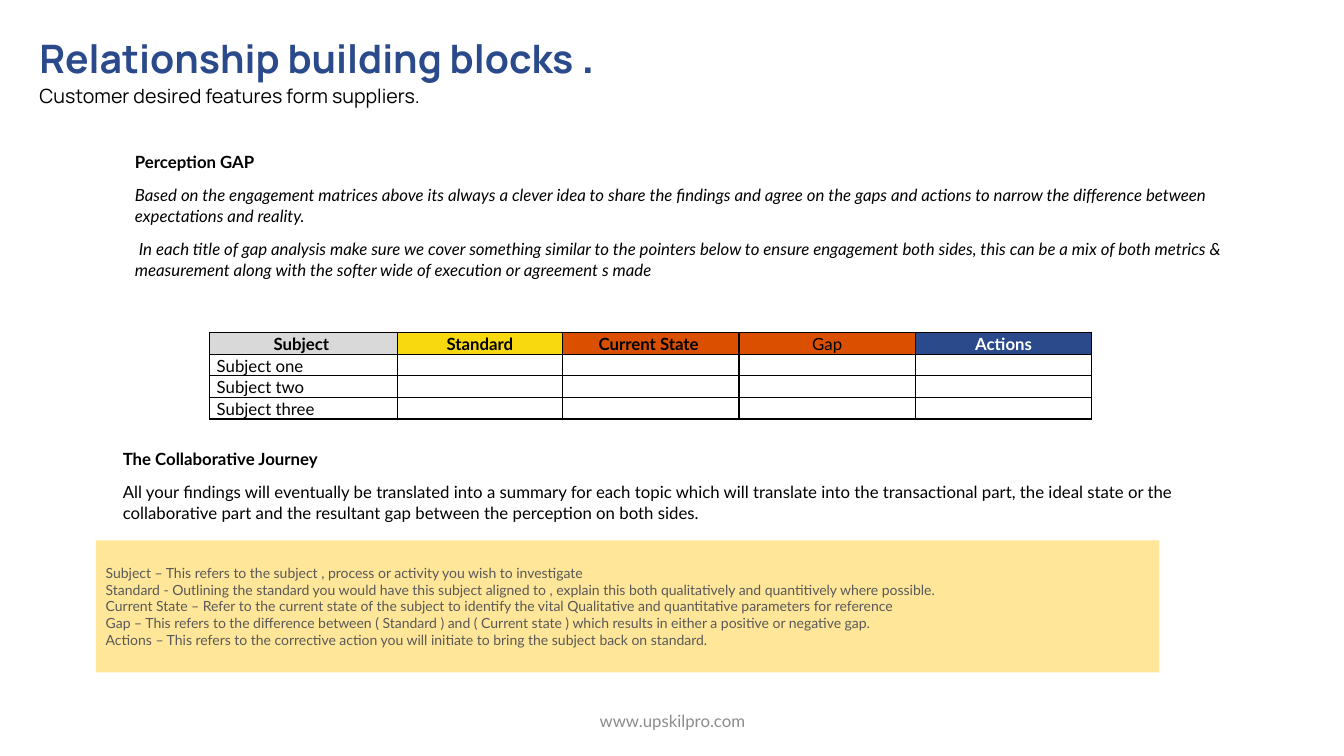
from pptx import Presentation
from pptx import util as u
from pptx.dml.color import RGBColor
from pptx.enum import shapes, text
from pptx.oxml import parse_xml
from pptx.oxml.ns import nsdecls

BLACK = RGBColor(0, 0, 0)
WHITE = RGBColor(255, 255, 255)
NAVY = RGBColor(0x2A, 0x4A, 0x8B)
GREY = RGBColor(0xD9, 0xD9, 0xD9)
YELLOW = RGBColor(0xF8, 0xD9, 0x0F)
ORANGE = RGBColor(0xDB, 0x50, 0x00)
CREAM = RGBColor(0xFF, 0xE6, 0x99)
SLATE = RGBColor(0x59, 0x59, 0x59)
SILVER = RGBColor(0x8C, 0x8C, 0x8C)

LEFT, MID = text.PP_ALIGN.LEFT, text.PP_ALIGN.CENTER
TOP, CENTER = text.MSO_ANCHOR.TOP, text.MSO_ANCHOR.MIDDLE
LOOSE = dict(line=1.07, after=8)


def px(n):
    return u.Emu(n * 9144)


def write(par, words, size=12, font="Lato", color=BLACK, bold=False,
          italic=False, align=LEFT, line=None, after=0):
    par.alignment = align
    par.space_after = u.Pt(after)
    if line:
        par.line_spacing = line
    run = par.add_run()
    run.text = words
    run.font.size = u.Pt(size)
    run.font.name = font
    run.font.bold = bold
    run.font.italic = italic
    run.font.color.rgb = color


class Board:
    """Holds the slide and its style, and adds each kind of element."""

    def __init__(self, deck):
        self.slide = deck.slides.add_slide(deck.slide_layouts[5])
        self.shapes = self.slide.shapes

    def fill(self, frame, lines, anchor):
        frame.word_wrap = True
        frame.vertical_anchor = anchor
        for i, (words, form) in enumerate(lines):
            par = frame.add_paragraph() if i else frame.paragraphs[0]
            write(par, words, **form)

    def title(self, box, head, dot, sub):
        item = self.shapes.title
        item.left, item.top, item.width, item.height = map(px, box)
        frame = item.text_frame
        frame.auto_size = text.MSO_AUTO_SIZE.NONE
        look = dict(font="Manrope", color=NAVY, bold=True)
        self.fill(frame, [(head, dict(look, size=28))], TOP)
        write(frame.paragraphs[0], dot, size=32, **look)
        write(frame.add_paragraph(), sub, size=14, font="Manrope", **LOOSE)

    def label(self, box, lines, anchor=TOP):
        item = self.shapes.add_textbox(*map(px, box))
        self.fill(item.text_frame, lines, anchor)

    def panel(self, box, color, lines, anchor=TOP):
        kind = shapes.MSO_SHAPE.RECTANGLE
        item = self.shapes.add_shape(kind, *map(px, box))
        item.shadow.inherit = False
        item.fill.solid()
        item.fill.fore_color.rgb = color
        item.line.fill.background()
        self.fill(item.text_frame, lines, anchor)

    def cell(self, cell, words, back, **form):
        cell.margin_left = cell.margin_right = px(7)
        cell.margin_top = cell.margin_bottom = 0
        par = cell.text_frame.paragraphs[0]
        if words:
            write(par, words, **form, **LOOSE)
        else:
            par.line_spacing = LOOSE["line"]
            end = f'<a:endParaRPr {nsdecls("a")} sz="1200"/>'
            par._p.append(parse_xml(end))
        props = cell._tc.get_or_add_tcPr()
        for side in ("lnL", "lnR", "lnT", "lnB"):
            props.append(parse_xml(
                f'<a:{side} {nsdecls("a")} w="12700"><a:solidFill>'
                f'<a:srgbClr val="{BLACK}"/></a:solidFill></a:{side}>'))
        cell.fill.solid()
        cell.fill.fore_color.rgb = back

    def table(self, box, wide, tall, heads, names):
        rows = len(names) + 1
        grid = self.shapes.add_table(rows, len(heads), *map(px, box)).table
        grid.first_row = grid.horz_banding = False
        for col, size in zip(grid.columns, wide):
            col.width = px(size)
        for row in grid.rows:
            row.height = px(tall)
        for c, (words, back, ink, bold) in enumerate(heads):
            self.cell(grid.cell(0, c), words, back,
                      color=ink, bold=bold, align=MID)
            for r, name in enumerate(names, 1):
                self.cell(grid.cell(r, c), "" if c else name, WHITE)


def main():
    deck = Presentation()
    deck.slide_width, deck.slide_height = px(1333), px(750)
    board = Board(deck)
    head = dict(LOOSE, bold=True)
    slant = dict(LOOSE, italic=True)

    board.title((29, 23, 701, 88), "Relationship building blocks ", ".",
                "Customer desired features form suppliers.")
    board.panel((124, 144, 1117, 139), WHITE, [
        ("Perception GAP", head),
        ("Based on the engagement matrices above its always a clever idea to "
         "share the findings and agree on the gaps and actions to narrow the "
         "difference between expectations and reality.", slant),
        (" In each title of gap analysis make sure we cover something similar "
         "to the pointers below to ensure engagement both sides, this can be "
         "a mix of both metrics & measurement along with the softer wide of "
         "execution or agreement s made", slant)])
    board.table((208, 330, 876, 84), (186, 164, 175, 175, 175), 21, [
        ("Subject ", GREY, BLACK, True),
        ("Standard", YELLOW, BLACK, True),
        ("Current State ", ORANGE, BLACK, True),
        ("Gap", ORANGE, BLACK, False),
        ("Actions", NAVY, WHITE, True),
    ], ("Subject one", "Subject two", "Subject three"))
    board.label((112, 439, 1093, 85), [
        ("The Collaborative Journey", head),
        ("All your findings will eventually be translated into a summary for "
         "each topic which will translate into the transactional part, the "
         "ideal state or the collaborative part and the resultant gap between "
         "the perception on both sides.", LOOSE)])
    notes = (
        "Subject – This refers to the subject , process or activity you wish "
        "to investigate",
        "Standard - Outlining the standard you would have this subject aligned "
        "to , explain this both qualitatively and quantitively where possible.",
        "Current State – Refer to the current state of the subject to identify "
        "the vital Qualitative and quantitative parameters for reference",
        "Gap – This refers to the difference between ( Standard ) and "
        "( Current state ) which results in either a positive or negative gap.",
        "Actions – This refers to the corrective action you will initiate to "
        "bring the subject back on standard.")
    small = dict(size=10, color=SLATE)
    board.panel((95, 536, 1055, 131), CREAM,
                [(note, small) for note in notes], CENTER)
    board.label((442, 695, 450, 40),
                [("www.upskilpro.com", dict(color=SILVER, align=MID))], CENTER)
    deck.save("out.pptx")


if __name__ == "__main__":
    main()
